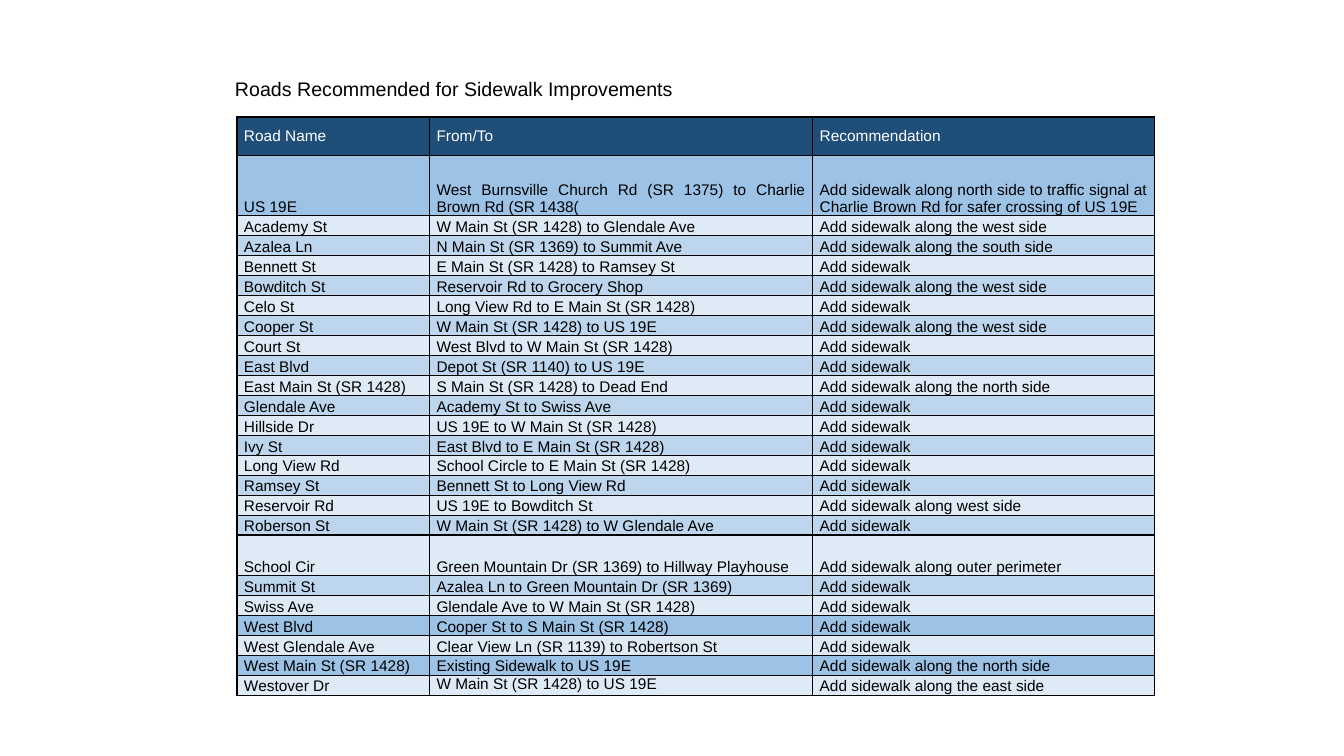
from lxml.etree import SubElement
from pptx import Presentation
from pptx.dml.color import RGBColor
from pptx.enum.text import MSO_ANCHOR as Anchor, MSO_AUTO_SIZE as AutoSize, PP_ALIGN as Align
from pptx.oxml.ns import qn
from pptx.util import Inches, Pt

HEADER_FILL = "1F4E79"
KEY_FILL = "9CC2E5"
ODD_FILL = "BDD6EE"
EVEN_FILL = "DEEAF6"
KEY_ROADS = {"US 19E", "West Blvd", "West Main St (SR 1428)"}

HEADINGS = ("Road Name", "From/To", "Recommendation")
ROADS = [
    ("US 19E", "West Burnsville Church Rd (SR 1375) to Charlie Brown Rd (SR 1438(",
     "Add sidewalk along north side to traffic signal at Charlie Brown Rd for safer crossing of US 19E"),
    ("Academy St", "W Main St (SR 1428) to Glendale Ave", "Add sidewalk along the west side"),
    ("Azalea Ln", "N Main St (SR 1369) to Summit Ave", "Add sidewalk along the south side"),
    ("Bennett St", "E Main St (SR 1428) to Ramsey St", "Add sidewalk"),
    ("Bowditch St", "Reservoir Rd to Grocery Shop", "Add sidewalk along the west side"),
    ("Celo St", "Long View Rd to E Main St (SR 1428)", "Add sidewalk"),
    ("Cooper St", "W Main St (SR 1428) to US 19E", "Add sidewalk along the west side"),
    ("Court St", "West Blvd to W Main St (SR 1428)", "Add sidewalk"),
    ("East Blvd", "Depot St (SR 1140) to US 19E", "Add sidewalk"),
    ("East Main St (SR 1428)", "S Main St (SR 1428) to Dead End", "Add sidewalk along the north side"),
    ("Glendale Ave", "Academy St to Swiss Ave", "Add sidewalk"),
    ("Hillside Dr", "US 19E to W Main St (SR 1428)", "Add sidewalk"),
    ("Ivy St", "East Blvd to E Main St (SR 1428)", "Add sidewalk"),
    ("Long View Rd", "School Circle to E Main St (SR 1428)", "Add sidewalk"),
    ("Ramsey St", "Bennett St to Long View Rd", "Add sidewalk"),
    ("Reservoir Rd", "US 19E to Bowditch St", "Add sidewalk along west side"),
    ("Roberson St", "W Main St (SR 1428) to W Glendale Ave", "Add sidewalk"),
    ("School Cir", "Green Mountain Dr (SR 1369) to Hillway Playhouse", "Add sidewalk along outer perimeter"),
    ("Summit St", "Azalea Ln to Green Mountain Dr (SR 1369)", "Add sidewalk"),
    ("Swiss Ave", "Glendale Ave to W Main St (SR 1428)", "Add sidewalk"),
    ("West Blvd", "Cooper St to S Main St (SR 1428)", "Add sidewalk"),
    ("West Glendale Ave", "Clear View Ln (SR 1139) to Robertson St", "Add sidewalk"),
    ("West Main St (SR 1428)", "Existing Sidewalk to US 19E", "Add sidewalk along the north side"),
    ("Westover Dr", "W Main St (SR 1428) to US 19E", "Add sidewalk along the east side"),
]
COLUMN_WIDTHS = (1.91, 3.8, 3.39)
TABLE_HEIGHT = 5.74
TALL_ROWS = {"Road Name": 0.38, "US 19E": 0.6, "School Cir": 0.4}


def color(value):
    return RGBColor.from_string(value)


class SlideBuilder:
    font_name = "Arial"
    text_color = "000000"
    border_color = "000000"

    def __init__(self, presentation):
        self.slide = presentation.slides.add_slide(presentation.slide_layouts[5])

    def format_text(self, text_frame, size, text_color, alignment):
        for paragraph in text_frame.paragraphs:
            paragraph.alignment = alignment
            for run in paragraph.runs:
                run.font.name = self.font_name
                run.font.size = Pt(size)
                run.font.color.rgb = color(text_color)

    def title(self, text, left, top, width, height):
        shape = self.slide.shapes.title
        shape.left, shape.top = Inches(left), Inches(top)
        shape.width, shape.height = Inches(width), Inches(height)
        text_frame = shape.text_frame
        text_frame.text = text
        text_frame.word_wrap = False
        text_frame.auto_size = AutoSize.NONE
        text_frame.vertical_anchor = Anchor.TOP
        self.format_text(text_frame, 14, self.text_color, Align.LEFT)

    def table(self, left, top, widths, heights):
        frame = self.slide.shapes.add_table(
            len(heights), len(widths), Inches(left), Inches(top),
            Inches(sum(widths)), Inches(sum(heights)))
        for column, width in zip(frame.table.columns, widths):
            column.width = Inches(width)
        for row, height in zip(frame.table.rows, heights):
            row.height = Inches(height)
        return frame.table

    def cell(self, cell, text, fill, text_color, anchor):
        cell.margin_left = cell.margin_right = Inches(0.07)
        cell.margin_top = cell.margin_bottom = 0
        cell.vertical_anchor = anchor
        cell.text_frame.text = text
        self.format_text(cell.text_frame, 11, text_color, Align.JUSTIFY)
        self.borders(cell)
        cell.fill.solid()
        cell.fill.fore_color.rgb = color(fill)

    def borders(self, cell):
        properties = cell._tc.get_or_add_tcPr()
        for side in ("a:lnL", "a:lnR", "a:lnT", "a:lnB"):
            line = SubElement(properties, qn(side), w=str(Pt(1)))
            fill = SubElement(line, qn("a:solidFill"))
            SubElement(fill, qn("a:srgbClr"), val=self.border_color)


def road_fill(index, road):
    if road in KEY_ROADS:
        return KEY_FILL
    return ODD_FILL if index % 2 else EVEN_FILL


def main():
    presentation = Presentation()
    presentation.slide_width = Inches(13.33)
    presentation.slide_height = Inches(7.5)
    builder = SlideBuilder(presentation)
    builder.title("Roads Recommended for Sidewalk Improvements", 2.23, 0.71, 4.57, 0.64)

    rows = [HEADINGS] + ROADS
    row_height = (TABLE_HEIGHT - sum(TALL_ROWS.values())) / (len(rows) - len(TALL_ROWS))
    heights = [TALL_ROWS.get(row[0], row_height) for row in rows]
    table = builder.table(2.35, 1.16, COLUMN_WIDTHS, heights)
    for index, row in enumerate(rows):
        for column, text in enumerate(row):
            cell = table.cell(index, column)
            if index == 0:
                builder.cell(cell, text, HEADER_FILL, "FFFFFF", Anchor.MIDDLE)
            else:
                builder.cell(cell, text, road_fill(index, row[0]), builder.text_color, Anchor.BOTTOM)
    table.cell(len(ROADS), 1).vertical_anchor = Anchor.TOP
    table.first_row = table.horz_banding = False

    presentation.save("out.pptx")


if __name__ == "__main__":
    main()
